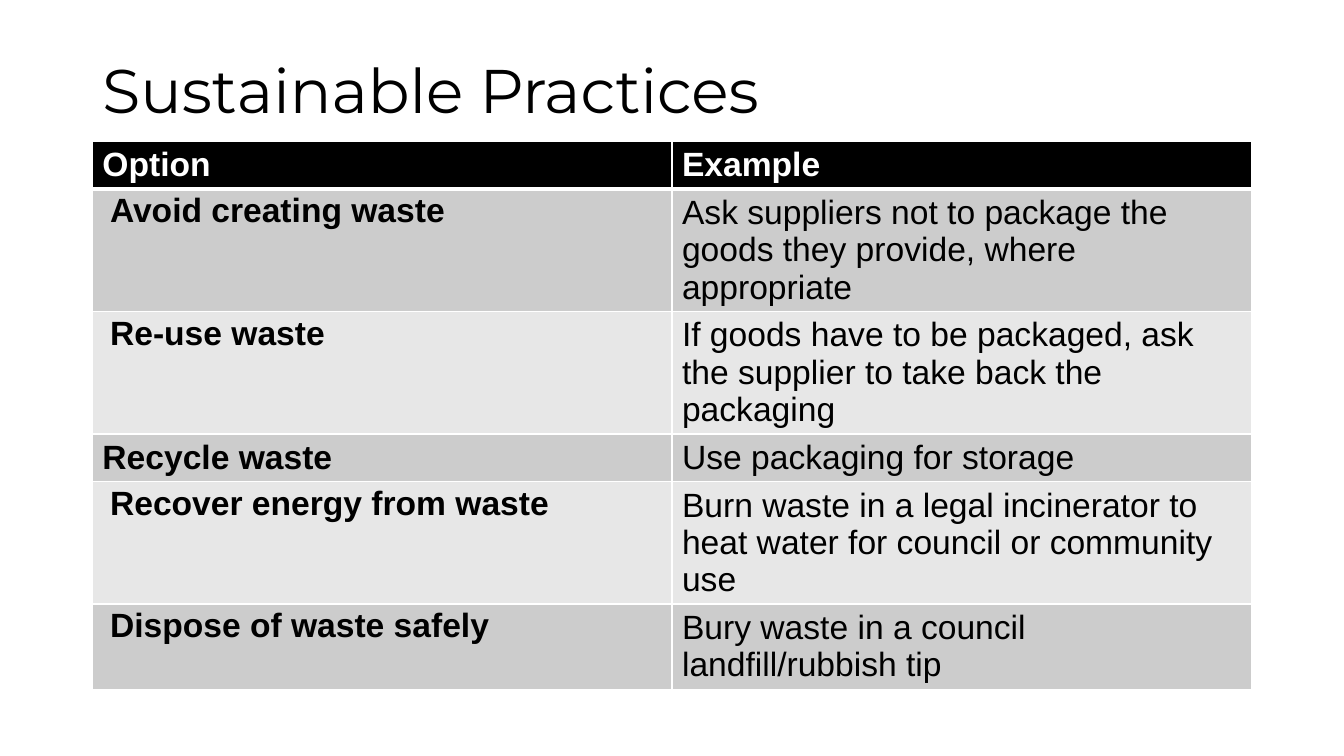
from pptx import Presentation
from pptx.dml.color import RGBColor
from pptx.enum.text import MSO_ANCHOR, MSO_AUTO_SIZE, PP_ALIGN
from pptx.oxml.ns import qn
from pptx.util import Pt
from lxml.etree import SubElement

COLORS = {"black": "000000", "white": "FFFFFF", "dark": "CCCCCC", "light": "E7E7E7"}
TITLE = {"name": "Montserrat", "size": Pt(44), "bold": False}
BODY = {"name": "Arial", "size": Pt(24), "bold": False}
BOLD = {**BODY, "bold": True}
INDENTED = {"space_before": Pt(0.7), "line_spacing": 0.96}
LINE, PADDING = 26.7, 7.2
HEADER = ("Option", "Example")
PRACTICES = [
    ("Avoid creating waste", "Ask suppliers not to package the goods they provide, where appropriate", 3, True),
    ("Re-use waste", "If goods have to be packaged, ask the supplier to take back the packaging", 3, True),
    ("Recycle waste", "Use packaging for storage", 1, False),
    ("Recover energy from waste", "Burn waste in a legal incinerator to heat water for council or community use", 3, True),
    ("Dispose of waste safely", "Bury waste in a council landfill/rubbish tip", 2, True),
]


def rgb(name):
    return RGBColor.from_string(COLORS[name])


def apply(target, values):
    for key, value in values.items():
        setattr(target, key, value)


def write(p, text, style, color):
    r = p.add_run()
    r.text = text
    apply(r.font, style)
    r.font.color.rgb = rgb(color)


def set_borders(cell, bottom):
    tc_pr = cell._tc.get_or_add_tcPr()
    widths = {"lnL": 1, "lnR": 1, "lnT": 1, "lnB": bottom}
    for i, (tag, width) in enumerate(widths.items()):
        ln = SubElement(tc_pr, qn(f"a:{tag}"), w=str(Pt(width)))
        fill = SubElement(ln, qn("a:solidFill"))
        SubElement(fill, qn("a:srgbClr"), val=COLORS["white"])
        tc_pr.insert(i, ln)


def fill_cell(cell, text, style, color, fill, bottom=1, indented=False):
    cell.fill.solid()
    cell.fill.fore_color.rgb = rgb(fill)
    set_borders(cell, bottom)
    p = cell.text_frame.paragraphs[0]
    if indented:
        p._p.get_or_add_pPr().set("marL", str(Pt(5.4)))
        apply(p, INDENTED)
    write(p, text, style, color)


def add_title(s, text):
    sp = s.shapes.title
    apply(sp, {"left": Pt(66), "top": Pt(14.4), "width": Pt(828), "height": Pt(104.4)})
    tf = sp.text_frame
    apply(tf, {"vertical_anchor": MSO_ANCHOR.MIDDLE, "auto_size": MSO_AUTO_SIZE.NONE, "word_wrap": True})
    p = tf.paragraphs[0]
    apply(p, {"alignment": PP_ALIGN.LEFT, "line_spacing": 0.9})
    write(p, text, TITLE, "black")


def add_practices(s):
    lines = [1] + [count for _, _, count, _ in PRACTICES]
    heights = [PADDING + LINE * count for count in lines]
    table = s.shapes.add_table(len(lines), 2, Pt(66), Pt(101), Pt(828), Pt(sum(heights))).table
    for row, height in zip(table.rows, heights):
        row.height = Pt(height)
    for col, text in enumerate(HEADER):
        fill_cell(table.cell(0, col), text, BOLD, "white", "black", bottom=3)
    for i, (option, example, _, indented) in enumerate(PRACTICES, 1):
        fill = "dark" if i % 2 else "light"
        fill_cell(table.cell(i, 0), option, BOLD, "black", fill, indented=indented)
        fill_cell(table.cell(i, 1), example, BODY, "black", fill)


def main():
    prs = Presentation()
    apply(prs, {"slide_width": Pt(960), "slide_height": Pt(540)})
    s = prs.slides.add_slide(prs.slide_layouts[5])
    add_title(s, "Sustainable Practices")
    add_practices(s)
    prs.save("out.pptx")


if __name__ == "__main__":
    main()
